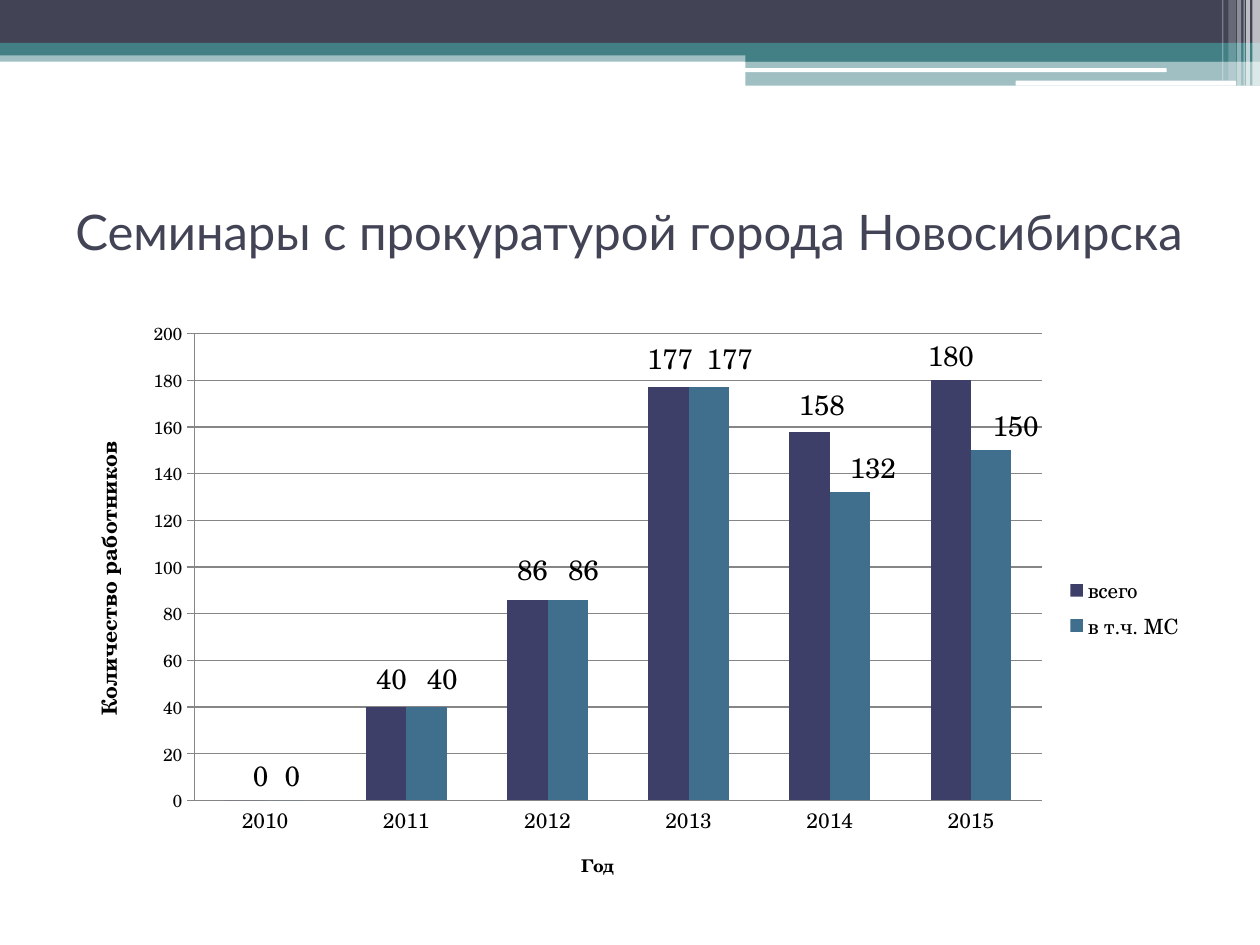
from typing import NamedTuple

from lxml.etree import SubElement
from pptx import Presentation
from pptx.chart.data import CategoryChartData
from pptx.dml.color import RGBColor
from pptx.enum.chart import XL_CHART_TYPE, XL_LABEL_POSITION, XL_LEGEND_POSITION, XL_TICK_MARK
from pptx.enum.shapes import MSO_SHAPE
from pptx.enum.text import MSO_ANCHOR
from pptx.oxml import parse_xml
from pptx.oxml.ns import nsdecls, qn
from pptx.util import Pt

SLATE = RGBColor(0x42, 0x44, 0x56)
TEAL = RGBColor(0x43, 0x80, 0x86)
WHITE = RGBColor(0xFF, 0xFF, 0xFF)
BLACK = RGBColor(0, 0, 0)
GRID_GREY = RGBColor(0x86, 0x86, 0x86)
INDIGO = RGBColor(0x3E, 0x3F, 0x68)
STEEL_BLUE = RGBColor(0x40, 0x6F, 0x8D)
TITLE_FONT = "Lato"
CHART_FONT = "TeX Gyre Schola"


class Band(NamedTuple):
    left: float
    top: float
    width: float
    height: float
    color: RGBColor
    opacity: int = 100
    preset: MSO_SHAPE = MSO_SHAPE.RECTANGLE


class Attendance(NamedTuple):
    name: str
    values: tuple
    color: RGBColor
    label_shifts: tuple


BANDS = (
    Band(0, 28.8, 720, 6.5, TEAL, 50),
    Band(0, 0, 720, 24.5, SLATE),
    Band(0, 24.5, 720, 7.2, TEAL),
    Band(426, 28, 294, 7.2, TEAL),
    Band(426, 34.6, 294, 14.4, TEAL, 50),
    Band(425.5, 39, 241.2, 2.2, WHITE, 100, MSO_SHAPE.ROUNDED_RECTANGLE),
    Band(580.3, 46.1, 126, 2.9, WHITE, 100, MSO_SHAPE.ROUNDED_RECTANGLE),
    Band(715.7, 0, 4.3, 49, WHITE, 65),
    Band(712.1, 0, 2.2, 49, WHITE, 65),
    Band(710.6, 0, 0.72, 49, WHITE, 60),
    Band(707, 0, 2.2, 49, WHITE, 40),
    Band(702, 0, 4.3, 46.1, WHITE, 20),
    Band(698.4, 0, 0.72, 46.1, WHITE, 30),
)
YEARS = ("2010", "2011", "2012", "2013", "2014", "2015")
CHART_WIDTH, CHART_HEIGHT = 648, 340.6
ATTENDANCE = (
    Attendance("всего", (0, 40, 86, 177, 158, 180), INDIGO,
               ((9, 0), (3, -2), (3, -3), (1, -2), (7, -1))),
    Attendance("в т.ч. МС", (0, 40, 86, 177, 132, 150), STEEL_BLUE,
               ((4, 0), (9, -2), (9, -3), (12, -2), (13, 0), (14, 0))),
)


def draw_band(slide, band: Band) -> None:
    stripe = slide.shapes.add_shape(
        band.preset, Pt(band.left), Pt(band.top), Pt(band.width), Pt(band.height))
    stripe.shadow.inherit = False
    stripe.line.fill.background()
    stripe.fill.solid()
    stripe.fill.fore_color.rgb = band.color
    if band.opacity < 100:
        color = stripe._element.spPr.find(qn("a:solidFill"))[0]
        SubElement(color, qn("a:alpha")).set("val", str(band.opacity * 1000))


def draw_heading(slide, text: str) -> None:
    heading = slide.shapes.add_textbox(Pt(36), Pt(90), Pt(648), Pt(84.2))
    frame = heading.text_frame
    frame.word_wrap = True
    frame.vertical_anchor = MSO_ANCHOR.MIDDLE
    frame.text = text
    font = frame.paragraphs[0].runs[0].font
    font.name, font.size, font.color.rgb = TITLE_FONT, Pt(28), SLATE


def style_font(font, size: float, bold: bool = False) -> None:
    font.name, font.size, font.bold = CHART_FONT, Pt(size), bold
    font.color.rgb = BLACK


def title_axis(axis, text: str, size: float) -> None:
    frame = axis.axis_title.text_frame
    frame.text = text
    style_font(frame.paragraphs[0].runs[0].font, size, True)


def manual_layout(target: str, **fractions: float):
    entries = "".join(f'<c:{key} val="{value:.4f}"/>' for key, value in fractions.items())
    return parse_xml(f'<c:layout {nsdecls("c")}><c:manualLayout>{target}{entries}'
                     '</c:manualLayout></c:layout>')


def style_series(series, attendance: Attendance) -> None:
    series.format.fill.solid()
    series.format.fill.fore_color.rgb = attendance.color
    series.invert_if_negative = False
    labels = series.data_labels
    labels.show_value = True
    labels.position = XL_LABEL_POSITION.OUTSIDE_END
    style_font(labels.font, 16)
    for index in range(len(attendance.label_shifts)):
        label = series.points[index].data_label
        label.position = XL_LABEL_POSITION.OUTSIDE_END
        style_font(label.font, 16)
    entries = labels._element.findall(qn("c:dLbl"))
    for entry, (right, down) in zip(entries, attendance.label_shifts):
        entry.insert(1, manual_layout("", x=right / CHART_WIDTH, y=down / CHART_HEIGHT))


def draw_chart(slide) -> None:
    data = CategoryChartData()
    data.categories = YEARS
    for attendance in ATTENDANCE:
        data.add_series(attendance.name, attendance.values)
    chart = slide.shapes.add_chart(
        XL_CHART_TYPE.COLUMN_CLUSTERED, Pt(36), Pt(177.1),
        Pt(CHART_WIDTH), Pt(CHART_HEIGHT), data).chart
    style_font(chart.font, 10)
    chart.has_title = False

    chart.has_legend = True
    chart.legend.position = XL_LEGEND_POSITION.RIGHT
    chart.legend.include_in_layout = False
    style_font(chart.legend.font, 12)

    plot = chart.plots[0]
    plot.gap_width = 150
    plot.overlap = 0
    plot.vary_by_categories = False
    for series, attendance in zip(plot.series, ATTENDANCE):
        style_series(series, attendance)

    years, workers = chart.category_axis, chart.value_axis
    title_axis(years, "Год", 10)
    title_axis(workers, "Количество работников", 12)
    style_font(years.tick_labels.font, 12)
    style_font(workers.tick_labels.font, 10)
    years.major_tick_mark = XL_TICK_MARK.NONE
    workers.major_tick_mark = XL_TICK_MARK.OUTSIDE
    workers.minimum_scale, workers.maximum_scale, workers.major_unit = 0, 200, 20
    workers.has_major_gridlines = True
    for line in (years.format.line, workers.format.line, workers.major_gridlines.format.line):
        line.color.rgb = GRID_GREY
        line.width = Pt(0.75)

    plot_area = chart._chartSpace.chart.plotArea
    for layout in plot_area.findall(qn("c:layout")):
        plot_area.remove(layout)
    plot_area.insert(0, manual_layout(
        '<c:layoutTarget val="inner"/><c:xMode val="edge"/><c:yMode val="edge"/>',
        x=0.116, y=0.04, w=0.747, h=0.783))


def main() -> None:
    presentation = Presentation()
    presentation.slide_width, presentation.slide_height = Pt(720), Pt(540)
    slide = presentation.slides.add_slide(presentation.slide_layouts[6])
    for band in BANDS:
        draw_band(slide, band)
    draw_heading(slide, "Семинары с прокуратурой города Новосибирска")
    draw_chart(slide)
    presentation.save("out.pptx")


if __name__ == "__main__":
    main()
